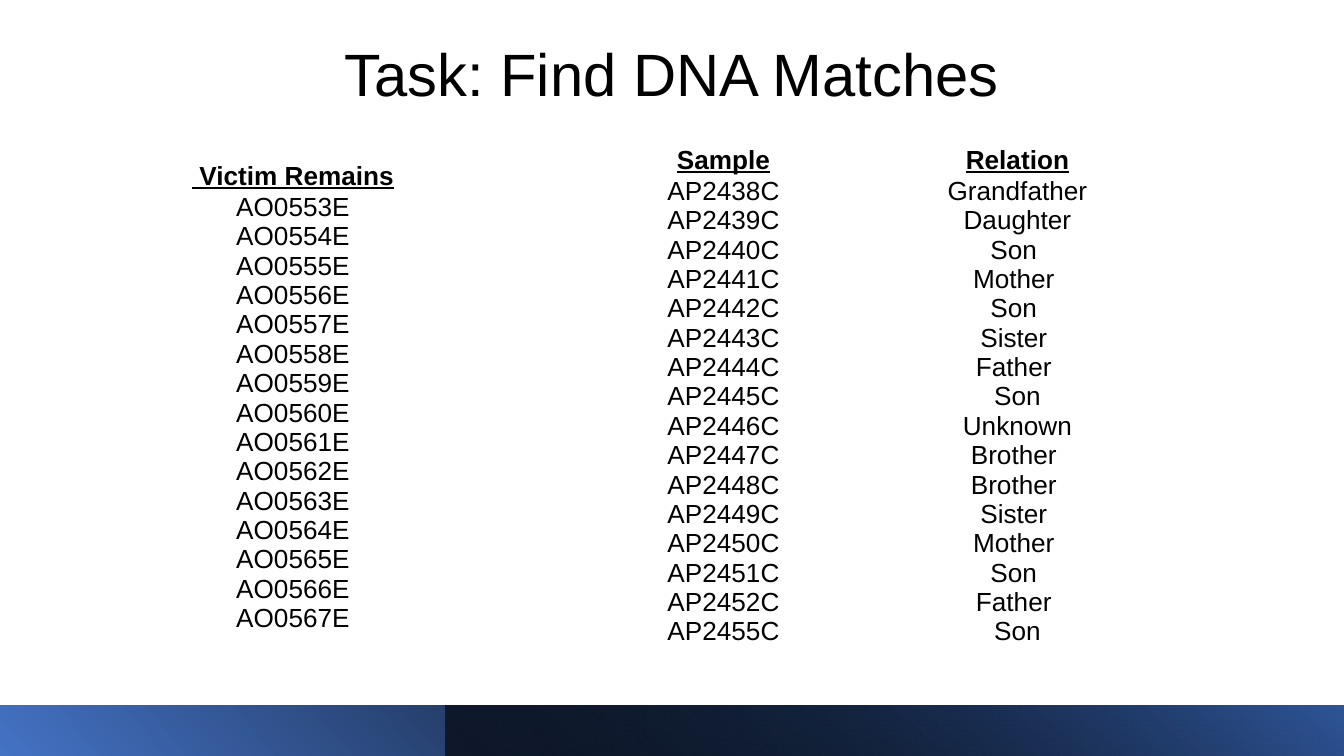
from dataclasses import dataclass

from lxml.etree import SubElement
from pptx import Presentation
from pptx.dml.color import RGBColor as Rgb
from pptx.enum.shapes import MSO_SHAPE as Shape
from pptx.enum.text import MSO_ANCHOR as Anchor, PP_ALIGN as Align
from pptx.oxml.ns import qn
from pptx.util import Pt


@dataclass(frozen=True)
class Theme:
    font: str = "Arial"
    title_size: int = 32
    body_size: int = 14
    text: str = "000000"
    dark: str = "000000"
    blue: str = "4472C4"
    deep_blue: str = "2F5597"
    plain_table: str = "{2D5ABB26-0587-4C30-8999-92F81FD0307C}"


THEME = Theme()
WIDTH, HEIGHT = 720, 405
BAND_TOP = 378

REMAINS = [f"AO{number:04}E" for number in range(553, 568)]
SAMPLES = [f"AP{number}C" for number in [*range(2438, 2453), 2455]]
RELATIONS = [
    "Grandfather", "Daughter", "Son ", "Mother ", "Son ", "Sister ",
    "Father ", "Son", "Unknown", "Brother ", "Brother ", "Sister ",
    "Mother ", "Son ", "Father ", "Son",
]


def write(para, text, *, size=THEME.body_size, bold=False, underline=False,
          spacing=None):
    para.alignment = Align.CENTER
    if spacing:
        para.line_spacing = spacing
    span = para.add_run()
    span.text = text
    font = span.font
    font.name, font.size = THEME.font, Pt(size)
    font.bold, font.underline = bold, underline
    font.color.rgb = Rgb.from_string(THEME.text)


def add_band(page, box, stops, angle):
    """Draw a gradient band; each stop is (position, colour, opacity)."""
    band = page.shapes.add_shape(Shape.RECTANGLE, *map(Pt, box))
    band.shadow.inherit = False
    band.line.fill.background()
    band.fill.gradient()
    band.fill.gradient_angle = angle
    for stop, (position, colour, opacity) in zip(band.fill.gradient_stops, stops):
        stop.position = position
        stop.color.rgb = Rgb.from_string(colour)
        if opacity < 100:
            # The stop's colour element takes the transparency
            colours = band.fill._xPr.iter(qn("a:srgbClr"))
            node = next(item for item in colours if item.get("val") == colour)
            SubElement(node, qn("a:alpha"), val=str(opacity * 1000))


def add_footer(page, box):
    left, top, width, height = box
    add_band(page, box,
             [(0, THEME.blue, 100), (0.78, THEME.dark, 100)], angle=40)
    inset = 238.5
    add_band(page, (left + inset, top, width - inset, height),
             [(0, THEME.dark, 63), (1, THEME.deep_blue, 100)], angle=50)


def add_title(page, box, text):
    frame = page.shapes.add_textbox(*map(Pt, box)).text_frame
    frame.word_wrap = True
    frame.vertical_anchor = Anchor.MIDDLE
    write(frame.paragraphs[0], text, size=THEME.title_size, spacing=0.9)


def add_lists(page, box, columns, widths, heights):
    """Place a heading row above one cell of lines for each column."""
    frame = page.shapes.add_table(2, len(columns), *map(Pt, box))
    table = frame.table
    table.first_row = table.horz_banding = False
    # A style without borders keeps the rows tight
    next(frame._element.iter(qn("a:tableStyleId"))).text = THEME.plain_table
    for row, height in zip(table.rows, heights):
        row.height = Pt(height)
    for index, (heading, lines) in enumerate(columns.items()):
        table.columns[index].width = Pt(widths[index])
        for row, texts in enumerate([[heading], lines]):
            cell = table.cell(row, index)
            cell.fill.background()
            cell.margin_left = cell.margin_right = Pt(5)
            cell.margin_top = cell.margin_bottom = 0
            body = cell.text_frame
            for number, text in enumerate(texts):
                para = body.add_paragraph() if number else body.paragraphs[0]
                write(para, text, bold=row == 0, underline=row == 0)
    frame.height = Pt(box[3])


def main():
    deck = Presentation()
    deck.slide_width, deck.slide_height = Pt(WIDTH), Pt(HEIGHT)
    page = deck.slides.add_slide(deck.slide_layouts[6])

    # Footer bands and title
    add_footer(page, (0, BAND_TOP, WIDTH, HEIGHT - BAND_TOP))
    add_title(page, (54, 9.4, 612, 63.4), "Task: Find DNA Matches")

    # Remains on the left, family samples on the right
    add_lists(page, (83.5, 86.4, 146.9, 268.6), {" Victim Remains": REMAINS},
              widths=[146.9], heights=[14.4, 229.7])
    add_lists(page, (321.8, 77.8, 315, 285.8),
              {"Sample": SAMPLES, "Relation": RELATIONS},
              widths=[131.6, 183.4], heights=[15.8, 268.6])

    deck.save("out.pptx")


if __name__ == "__main__":
    main()
